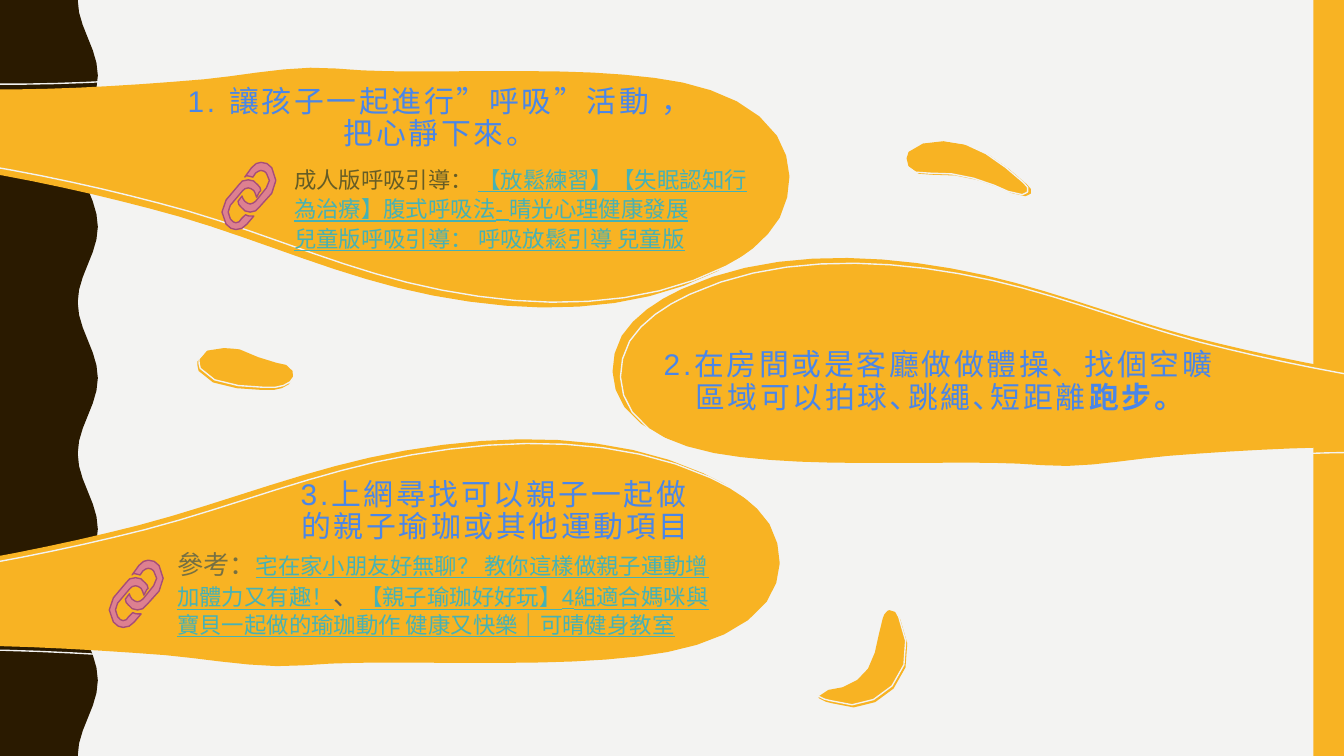
import math

from pptx import Presentation
from pptx import util as u
from pptx.dml.color import RGBColor
from pptx.enum import shapes, text

THEME = {
    "font": "Arial",
    "paper": RGBColor.from_string("F3F3F2"),
    "edge": RGBColor.from_string("2A1A00"),
    "amber": RGBColor.from_string("F8B323"),
    "pink": RGBColor.from_string("DD8090"),
    "plum": RGBColor.from_string("A64D79"),
    "styles": {
        "title": {"size": 16, "color": "4A86E8", "spacing": 1.5},
        "strong": {"size": 16, "color": "4A86E8", "spacing": 1.5, "bold": True},
        "label": {"size": 12, "color": "665D26"},
        "reference": {"size": 14, "color": "757043"},
        "comma": {"size": 14, "color": "595959"},
        "link": {"size": 12, "color": "46B2B5", "underline": True},
    },
}

BULB = [
    (32, 62), (60, 68, 89, 71, 118, 75), (178, 84, 237, 97, 294, 113),
    (349, 129, 401, 152, 457, 166), (534, 185, 623, 190, 694, 154),
    (714, 144, 731, 131, 741, 114), (751, 94, 751, 72, 739, 53),
    (721, 26, 682, 14, 648, 10), (602, 4, 556, 5, 510, 5),
    (477, 5, 443, 6, 411, 3), (380, 0, 344, 8, 313, 11),
    (242, 17, 171, 21, 101, 17), (84, 16, 67, 15, 50, 17),
    (38, 19, 26, 23, 15, 29), (7, 32, 0, 39, 2, 45),
    (3, 52, 12, 56, 21, 59), (24, 60, 28, 61, 32, 62),
]
HOOK = [
    (1, 65), (1, 66, 2, 67, 3, 67), (5, 68, 8, 70, 11, 70),
    (27, 77, 45, 72, 57, 59), (70, 45, 70, 24, 62, 7),
    (61, 3, 58, -1, 54, 0), (53, 0, 53, 0, 52, 1), (50, 2, 50, 4, 49, 6),
    (45, 18, 45, 33, 38, 44), (34, 51, 27, 55, 19, 58), (16, 59, 0, 60, 1, 65),
]
LEAF = [
    (2, 8), (0, 11, 0, 14, 2, 19), (5, 25, 13, 25, 20, 25),
    (37, 24, 53, 28, 68, 34), (75, 37, 82, 41, 89, 41), (91, 40, 92, 40, 93, 39),
    (95, 37, 92, 34, 90, 32), (73, 17, 53, 0, 28, 0), (18, 0, 6, 2, 2, 8),
]
BEAN = [
    (48, 31), (52, 31, 56, 31, 58, 31), (62, 30, 66, 30, 69, 27),
    (72, 25, 74, 20, 72, 17), (70, 12, 65, 12, 60, 11), (50, 9, 42, 5, 32, 1),
    (30, 1, 25, 0, 20, 0), (11, 0, 1, 2, 0, 10), (0, 12, 0, 15, 1, 17),
    (6, 28, 32, 31, 48, 31),
]
UPPER_RING = [
    (17, 0), (15, 0, 12, 1, 10, 4), (5, 11), (5, 10, 6, 10, 7, 10),
    (8, 10, 10, 11, 11, 11), (13, 8), (14, 7, 16, 6, 17, 6),
    (19, 6, 20, 7, 21, 8), (24, 11, 24, 16, 21, 19), (13, 29),
    (12, 30, 10, 31, 9, 31), (8, 31, 6, 30, 5, 29), (4, 28, 3, 26, 3, 25),
    (0, 29), (0, 31, 1, 32, 2, 33), (4, 36, 6, 37, 9, 37),
    (12, 37, 14, 36, 16, 33), (25, 23), (29, 18, 29, 9, 25, 4),
    (23, 1, 20, 0, 17, 0),
]
LOWER_RING = [
    (20, 0), (17, 0, 14, 1, 13, 4), (4, 15), (0, 20, 0, 28, 4, 33),
    (6, 36, 9, 37, 11, 37), (14, 37, 17, 36, 19, 33), (24, 27),
    (22, 27), (21, 27, 19, 27, 18, 26), (15, 29),
    (14, 31, 13, 32, 11, 32), (10, 32, 8, 31, 7, 29), (5, 26, 5, 22, 7, 19),
    (16, 8), (17, 7, 18, 6, 20, 6), (21, 6, 23, 7, 24, 8),
    (25, 9, 25, 11, 26, 13), (28, 9), (29, 8), (29, 6, 28, 5, 27, 4),
    (25, 1, 23, 0, 20, 0),
]

presentation = Presentation()
presentation.slide_width, presentation.slide_height = u.Cm(25.4), u.Cm(14.29)
slide = presentation.slides.add_slide(presentation.slide_layouts[6])
slide.background.fill.solid()
slide.background.fill.fore_color.rgb = THEME["paper"]


def draw(outline, box, fill=None, line=None, mirror=(1, 1)):
    left, top, width, height = box
    segments = [[value * mirror[i % 2] for i, value in enumerate(segment)] for segment in outline]
    xs = [x for segment in segments for x in segment[::2]]
    ys = [y for segment in segments for y in segment[1::2]]
    points = [tuple(segments[0])]
    for segment in segments[1:]:
        if len(segment) == 2:
            points.append(tuple(segment))
            continue
        start = points[-1]
        steps = 2 + int(math.dist(start, segment[-2:]) / 30)
        for step in range(1, steps + 1):
            t = step / steps
            points.append(tuple(
                (1 - t) ** 3 * start[i] + 3 * (1 - t) ** 2 * t * segment[i]
                + 3 * (1 - t) * t ** 2 * segment[i + 2] + t ** 3 * segment[i + 4]
                for i in (0, 1)))
    placed = [(u.Cm(left + (x - min(xs)) / (max(xs) - min(xs)) * width),
               u.Cm(top + (y - min(ys)) / (max(ys) - min(ys)) * height)) for x, y in points]
    builder = slide.shapes.build_freeform(*placed[0])
    builder.add_line_segments(placed[1:], close=True)
    shape = builder.convert_to_shape()
    shape.shadow.inherit = False
    for paint, color in ((shape.fill, fill), (shape.line.fill, line)):
        if color is None:
            paint.background()
        else:
            paint.solid()
            paint.fore_color.rgb = color
    if line is not None:
        shape.line.width = u.Pt(0.75)


def write(box, paragraphs, line_spacing=None, bottom=0.25, align=None, gap=None):
    frame = slide.shapes.add_textbox(*map(u.Cm, box)).text_frame
    frame.word_wrap = True
    frame.vertical_anchor = text.MSO_ANCHOR.MIDDLE
    frame.margin_left = frame.margin_right = frame.margin_top = u.Cm(0.25)
    frame.margin_bottom = u.Cm(bottom)
    for index, runs in enumerate(paragraphs):
        paragraph = frame.add_paragraph() if index else frame.paragraphs[0]
        paragraph.alignment = align
        paragraph.line_spacing = line_spacing
        paragraph.space_before = paragraph.space_after = gap
        paragraph.font.name = THEME["font"]
        shared = len({name for _, name in runs}) == 1
        for words, name in runs:
            run = paragraph.add_run()
            run.text = words
            style = THEME["styles"][name]
            font = paragraph.font if shared else run.font
            font.size = u.Pt(style["size"])
            font.color.rgb = RGBColor.from_string(style["color"])
            font.bold = style.get("bold")
            font.underline = style.get("underline")
            if "spacing" in style:
                font._rPr.set("spc", str(int(style["spacing"] * 100)))


wave = [(1.66 - 0.19 * math.cos(step * math.pi / 6), step * 14.29 / 60) for step in range(61)]
draw([(0, 0), *wave, (0, 14.29)], (0, 0, 1.85, 14.29), THEME["edge"])

bar = slide.shapes.add_shape(shapes.MSO_SHAPE.RECTANGLE, u.Cm(24.82), 0, u.Cm(0.58), u.Cm(14.29))
bar.shadow.inherit = False
bar.fill.solid()
bar.fill.fore_color.rgb = THEME["amber"]
bar.line.fill.background()

bulbs = [
    (BULB, (11.51, 4.67, 18.11, 4.19), (0.15, 0.1), (-1, -1)),
    (BULB, (-4.09, 1.22, 19.08, 4.83), (0.18, -0.1), (1, 1)),
    (BULB, (-5.23, 8.08, 20.04, 4.57), (0.13, 0.08), (1, -1)),
]
seeds = [
    (HOOK, (15.44, 11.51, 1.78, 1.96), (-0.03, -0.05), (1, 1)),
    (LEAF, (17.12, 2.67, 2.41, 1.04), (-0.06, -0.03), (1, 1)),
    (BEAN, (3.73, 6.58, 1.85, 0.79), (0.03, -0.05), (1, 1)),
]
for outline, (left, top, width, height), (dx, dy), mirror in bulbs + seeds:
    draw(outline, (left, top, width, height), fill=THEME["amber"], mirror=mirror)
    draw(outline, (left + dx, top + dy, width, height), line=THEME["paper"], mirror=mirror)

titles = [
    ((12.07, 6.55, 11.38, 2.74), 1.63,
     [[("2.在房間或是客廳做做體操、找個空曠區域可以拍球､跳繩､短距離", "title"), ("跑步。", "strong")]]),
    ((5.23, 8.31, 8.26, 2.74), 0.25, [[("3.上網尋找可以親子一起做的親子瑜珈或其他運動項目", "title")]]),
    ((1.98, 1.57, 12.67, 2.74), 1.63,
     [[("1. 讓孩子一起進行”呼吸”活動 ，", "title")], [("把心靜下來。", "title")]]),
]
for box, bottom, paragraphs in titles:
    write(box, paragraphs, 0.9, bottom, text.PP_ALIGN.CENTER)

write((5.31, 3.4, 9.35, 1.04), [
    [("成人版呼吸引導： ", "label"),
     ("【放鬆練習】【失眠認知行為治療】腹式呼吸法- 晴光心理健康發展", "link")],
    [("兒童版呼吸引導： 呼吸放鬆引導 兒童版", "link")],
], 1.1)
write((3.1, 10.69, 10.9, 1.04), [[
    ("參考：", "reference"),
    ("宅在家小朋友好無聊？ 教你這樣做親子運動增加體力又有趣！", "link"),
    ("、", "comma"),
    ("【親子瑜珈好好玩】4組適合媽咪與寶貝一起做的瑜珈動作 健康又快樂｜可晴健身教室", "link"),
]], gap=u.Pt(12))

for dx, dy in ((0, 0), (-2.13, 7.52)):
    draw(UPPER_RING, (4.5 + dx, 3.07 + dy, 0.74, 0.94), THEME["pink"], THEME["plum"])
    draw(LOWER_RING, (4.17 + dx, 3.4 + dy, 0.76, 0.94), THEME["pink"], THEME["plum"])

presentation.save("out.pptx")
